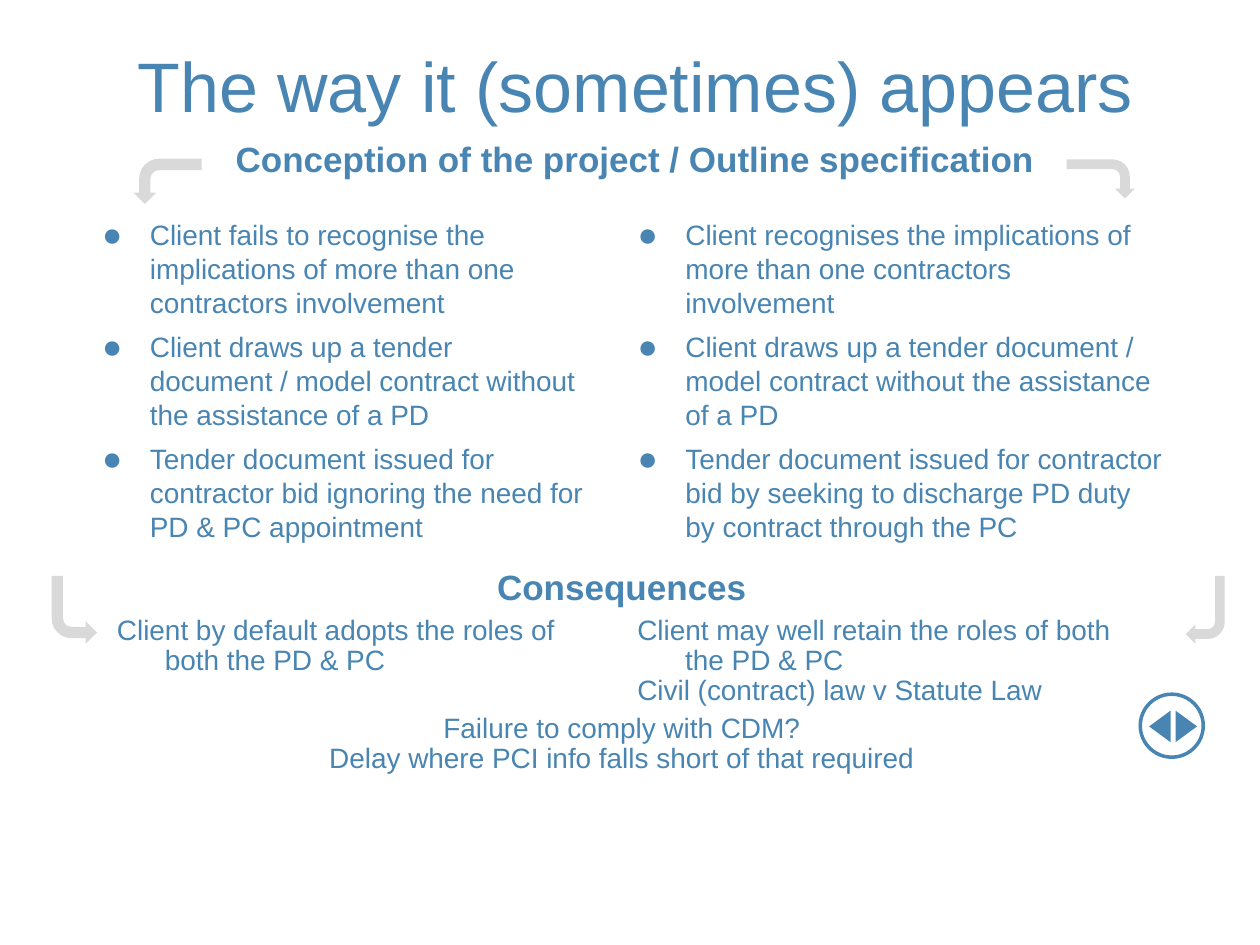
from dataclasses import dataclass

from lxml import etree
from pptx import Presentation
from pptx import util as u
from pptx.dml.color import RGBColor
from pptx.enum import shapes, text
from pptx.oxml.ns import qn

BLUE = RGBColor(0x48, 0x85, 0xB2)
GREY = RGBColor(0xD9, 0xD9, 0xD9)
WHITE = RGBColor(0xFF, 0xFF, 0xFF)
FONT = "Arial"
HANGING = u.Inches(0.38)
CENTER = text.PP_ALIGN.CENTER


@dataclass
class Box:
    left: float
    top: float
    width: float
    height: float

    def lengths(self) -> list[u.Length]:
        return [u.Inches(v) for v in (self.left, self.top, self.width, self.height)]


@dataclass
class Symbol:
    preset: shapes.MSO_SHAPE
    box: Box
    fill: RGBColor
    rotation: float = 0
    flipped: bool = False
    outlined: bool = False


@dataclass
class BulletColumn:
    box: Box
    items: list[str]


@dataclass
class Outcome:
    box: Box
    lines: list[str]


ARROW = shapes.MSO_SHAPE.BENT_ARROW
TRIANGLE = shapes.MSO_SHAPE.FLOWCHART_EXTRACT

SYMBOLS = [
    Symbol(shapes.MSO_SHAPE.OVAL, Box(9.05, 5.51, 0.5, 0.5), WHITE, outlined=True),
    Symbol(TRIANGLE, Box(9.29, 5.68, 0.25, 0.17), BLUE, 90),
    Symbol(TRIANGLE, Box(9.08, 5.68, 0.25, 0.17), BLUE, 270),
    Symbol(ARROW, Box(8.58, 1.15, 0.31, 0.54), GREY, 90),
    Symbol(ARROW, Box(1.15, 1.17, 0.36, 0.54), GREY, 270, flipped=True),
    Symbol(ARROW, Box(9.41, 4.57, 0.31, 0.54), GREY, 180),
    Symbol(ARROW, Box(0.41, 4.57, 0.36, 0.54), GREY, 180, flipped=True),
]

COLUMNS = [
    BulletColumn(Box(0.71, 1.68, 4.13, 2.74), [
        "Client fails to recognise the implications of more than one contractors involvement",
        "Client draws up a tender document / model contract without the assistance of a PD",
        "Tender document issued for contractor bid ignoring the need for PD & PC appointment",
    ]),
    BulletColumn(Box(4.96, 1.68, 4.37, 2.74), [
        "Client recognises the implications of more than one contractors involvement",
        "Client draws up a tender document / model contract without the assistance of a PD",
        "Tender document issued for contractor bid by seeking to discharge PD duty "
        "by contract through the PC",
    ]),
]

OUTCOMES = [
    Outcome(Box(0.83, 4.49, 4.02, 0.92),
            ["Client by default adopts the roles of both the PD & PC"]),
    Outcome(Box(4.96, 4.49, 4.02, 1.16),
            ["Client may well retain the roles of both the PD & PC",
             "Civil (contract) law v Statute Law"]),
]


def write(shape, lines: list[str], size: float, bold: bool = False,
          align=text.PP_ALIGN.LEFT, spacing: float = 0.9) -> list:
    frame = shape.text_frame
    frame.word_wrap = True
    frame.auto_size = text.MSO_AUTO_SIZE.NONE
    frame.text = "\n".join(lines)
    for paragraph in frame.paragraphs:
        paragraph.alignment = align
        paragraph.line_spacing = spacing
        paragraph.space_before = u.Pt(0)
        for run in paragraph.runs:
            style(run.font, size, bold)
    return list(frame.paragraphs)


def style(font, size: float, bold: bool) -> None:
    font.name = FONT
    font.size = u.Pt(size)
    font.bold = bold
    font.color.rgb = BLUE


def hang(paragraph) -> None:
    properties = paragraph._p.get_or_add_pPr()
    properties.set("marL", str(HANGING))
    properties.set("indent", str(-HANGING))


def add_bullet(paragraph) -> None:
    properties = paragraph._p.get_or_add_pPr()
    for tag, name, value in (("a:buSzPct", "val", "120000"),
                             ("a:buFont", "typeface", FONT),
                             ("a:buChar", "char", "●")):
        etree.SubElement(properties, qn(tag)).set(name, value)


def place(shape, box: Box) -> None:
    shape.left, shape.top, shape.width, shape.height = box.lengths()


def draw_symbol(slide, symbol: Symbol) -> None:
    shape = slide.shapes.add_shape(symbol.preset, *symbol.box.lengths())
    shape.shadow.inherit = False
    shape.rotation = symbol.rotation
    shape.fill.solid()
    shape.fill.fore_color.rgb = symbol.fill
    if symbol.outlined:
        shape.line.color.rgb = BLUE
        shape.line.width = u.Pt(2)
    else:
        shape.line.fill.background()
    if symbol.flipped:
        shape._element.spPr.find(qn("a:xfrm")).set("flipH", "1")


def fill_column(placeholder, column: BulletColumn) -> None:
    place(placeholder, column.box)
    paragraphs = write(placeholder, column.items, 16, spacing=1.0)
    for paragraph in paragraphs:
        hang(paragraph)
        add_bullet(paragraph)
    for paragraph in paragraphs[1:]:
        paragraph.space_before = u.Pt(6.4)


def draw_outcome(slide, outcome: Outcome) -> None:
    """Leave room for the shared heading above the text."""
    shape = slide.shapes.add_textbox(*outcome.box.lengths())
    shape.text_frame.margin_top = u.Inches(0.4)
    for paragraph in write(shape, outcome.lines, 16):
        hang(paragraph)


def draw_consequences(slide) -> None:
    shape = slide.shapes.add_textbox(*Box(2.33, 4.48, 5.21, 1.98).lengths())
    heading, *results = write(shape, [
        "Consequences",
        "Failure to comply with CDM?",
        "Delay where PCI info falls short of that required",
    ], 16, align=CENTER)
    style(heading.runs[0].font, 20, True)
    results[0].space_before = u.Pt(60.5)


def main() -> None:
    presentation = Presentation()
    presentation.slide_width = u.Inches(10)
    presentation.slide_height = u.Inches(7.5)
    slide = presentation.slides.add_slide(presentation.slide_layouts.get_by_name("Two Content"))

    title, *bodies = slide.placeholders
    place(title, Box(0.75, 0.36, 8.58, 0.7))
    title.text_frame.vertical_anchor = text.MSO_ANCHOR.MIDDLE
    write(title, ["The way it (sometimes) appears"], 40, align=CENTER)
    for placeholder, column in zip(bodies, COLUMNS):
        fill_column(placeholder, column)

    subtitle = slide.shapes.add_textbox(*Box(0.75, 1.08, 8.58, 0.4).lengths())
    write(subtitle, ["Conception of the project / Outline specification"], 20, True, CENTER)
    for symbol in SYMBOLS:
        draw_symbol(slide, symbol)
    for outcome in OUTCOMES:
        draw_outcome(slide, outcome)
    draw_consequences(slide)
    presentation.save("out.pptx")


if __name__ == "__main__":
    main()
